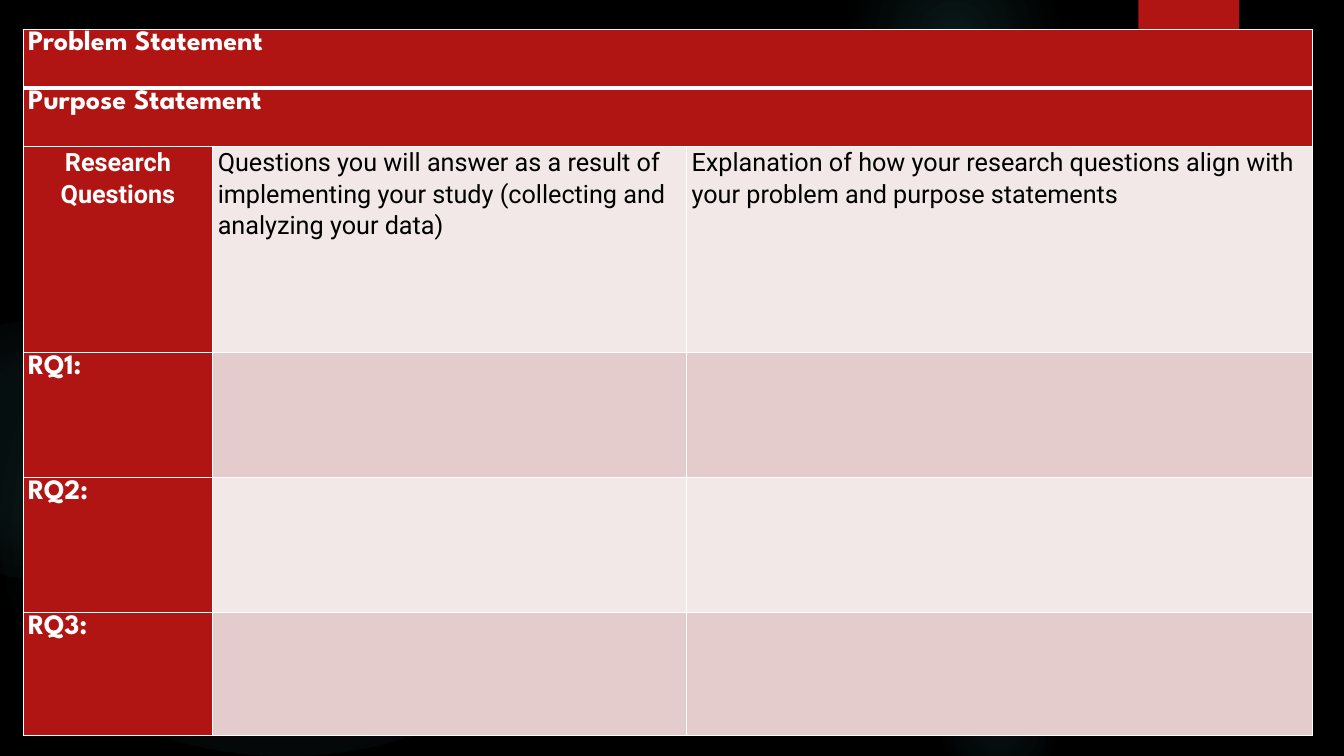
from dataclasses import dataclass

from lxml.etree import SubElement
from pptx import Presentation
from pptx.dml.color import RGBColor
from pptx.enum.shapes import MSO_SHAPE
from pptx.enum.text import PP_ALIGN
from pptx.oxml import parse_xml
from pptx.oxml.ns import nsdecls, qn
from pptx.util import Inches, Pt


@dataclass(frozen=True)
class Theme:
    background: str = "000000"
    glow: str = "50B9C1"
    red: str = "B01513"
    pale: str = "F2E8E7"
    rose: str = "E4CCCC"
    white: str = "FFFFFF"
    black: str = "000000"
    heading_font: str = "League Spartan"
    body_font: str = "Roboto"
    heading_size: int = 20
    body_size: int = 18


theme = Theme()


def add_plain_shape(kind, left, top, width, height):
    shape = page.shapes.add_shape(
        kind, Inches(left), Inches(top), Inches(width), Inches(height))
    shape.shadow.inherit = False
    shape.line.fill.background()
    return shape


def set_borders(cell, top_width, bottom_width):
    properties = cell._tc.get_or_add_tcPr()
    sides = {"lnL": 1, "lnR": 1, "lnT": top_width, "lnB": bottom_width}
    for position, (side, width) in enumerate(sides.items()):
        border = parse_xml(
            f'<a:{side} {nsdecls("a")} w="{Pt(width)}"><a:solidFill>'
            f'<a:srgbClr val="{theme.white}"/></a:solidFill></a:{side}>')
        properties.insert(position, border)


deck = Presentation()
deck.slide_width, deck.slide_height = Inches(13.33), Inches(7.5)
page = deck.slides.add_slide(deck.slide_layouts[6])
page.background.fill.solid()
page.background.fill.fore_color.rgb = RGBColor.from_string(theme.background)

# Soft glows: left, top, width, height, then (position, opacity) stops in percent
glows = [
    (9.19, 1.83, 4.11, 3.08, [(0, 7), (36, 6), (69, 0)]),
    (8.3, -0.5, 2.33, 1.75, [(0, 14), (36, 7), (73, 0)]),
    (9.19, 6.67, 1.44, 1.08, [(0, 9), (36, 5), (66, 0)]),
    (-0.22, 2.92, 6.11, 4.58, [(0, 11), (36, 10), (75, 0)]),
    (-1.22, 3.17, 3.44, 2.58, [(0, 8), (36, 8), (72, 0)]),
]
for left, top, width, height, stops in glows:
    glow = add_plain_shape(MSO_SHAPE.OVAL, left, top, width, height)
    glow.fill.background()
    gradient = parse_xml(
        f'<a:gradFill {nsdecls("a")} rotWithShape="1"><a:gsLst/><a:path path="circle">'
        '<a:fillToRect l="50000" t="50000" r="50000" b="50000"/></a:path></a:gradFill>')
    for position, opacity in stops:
        stop = SubElement(gradient[0], qn("a:gs"), pos=str(position * 1000))
        color = SubElement(stop, qn("a:srgbClr"), val=theme.glow)
        SubElement(color, qn("a:alpha"), val=str(opacity * 1000))
    shape_properties = glow._element.spPr
    shape_properties.replace(shape_properties.find(qn("a:noFill")), gradient)

# Red tab at the top edge
tab = add_plain_shape(MSO_SHAPE.RECTANGLE, 11.29, 0, 1, 1.2)
tab.fill.solid()
tab.fill.fore_color.rgb = RGBColor.from_string(theme.red)

# Research alignment table
rows = [
    ["Problem Statement", "", ""],
    ["Purpose Statement", "", ""],
    ["Research Questions",
     "Questions you will answer as a result of implementing your study "
     "(collecting and analyzing your data)",
     "Explanation of how your research questions align with your problem "
     "and purpose statements"],
    ["RQ1:", "", ""],
    ["RQ2:", "", ""],
    ["RQ3:", "", ""],
]
column_widths = [1.88, 4.7, 6.21]
row_heights = [0.58, 0.58, 2.05, 1.24, 1.34, 1.22]
statement_rows, guide_row = 2, 2

table = page.shapes.add_table(
    len(rows), len(column_widths), Inches(0.23), Inches(0.29),
    Inches(sum(column_widths)), Inches(sum(row_heights))).table
for column, width in zip(table.columns, column_widths):
    column.width = Inches(width)
for row, height in zip(table.rows, row_heights):
    row.height = Inches(height)
for index in range(statement_rows):
    table.cell(index, 0).merge(table.cell(index, 2))

for row_index, texts in enumerate(rows):
    for column_index, text in enumerate(texts):
        cell = table.cell(row_index, column_index)
        is_label = column_index == 0
        is_guide = row_index == guide_row
        if is_label or row_index < statement_rows:
            fill = theme.red
        else:
            fill = theme.rose if row_index % 2 else theme.pale
        cell.fill.solid()
        cell.fill.fore_color.rgb = RGBColor.from_string(fill)
        cell.margin_left = cell.margin_right = Inches(0.05)
        cell.margin_top = cell.margin_bottom = 0
        set_borders(cell, 3 if row_index == 1 else 1, 3 if row_index == 0 else 1)
        if not text:
            continue
        cell.text_frame.text = text
        para = cell.text_frame.paragraphs[0]
        para.line_spacing = 1.07
        para.alignment = PP_ALIGN.CENTER if is_guide and is_label else PP_ALIGN.LEFT
        font = para.runs[0].font
        font.name = theme.body_font if is_guide else theme.heading_font
        font.size = Pt(theme.body_size if is_guide else theme.heading_size)
        font.bold = is_label
        font.color.rgb = RGBColor.from_string(theme.white if is_label else theme.black)

deck.save("out.pptx")
